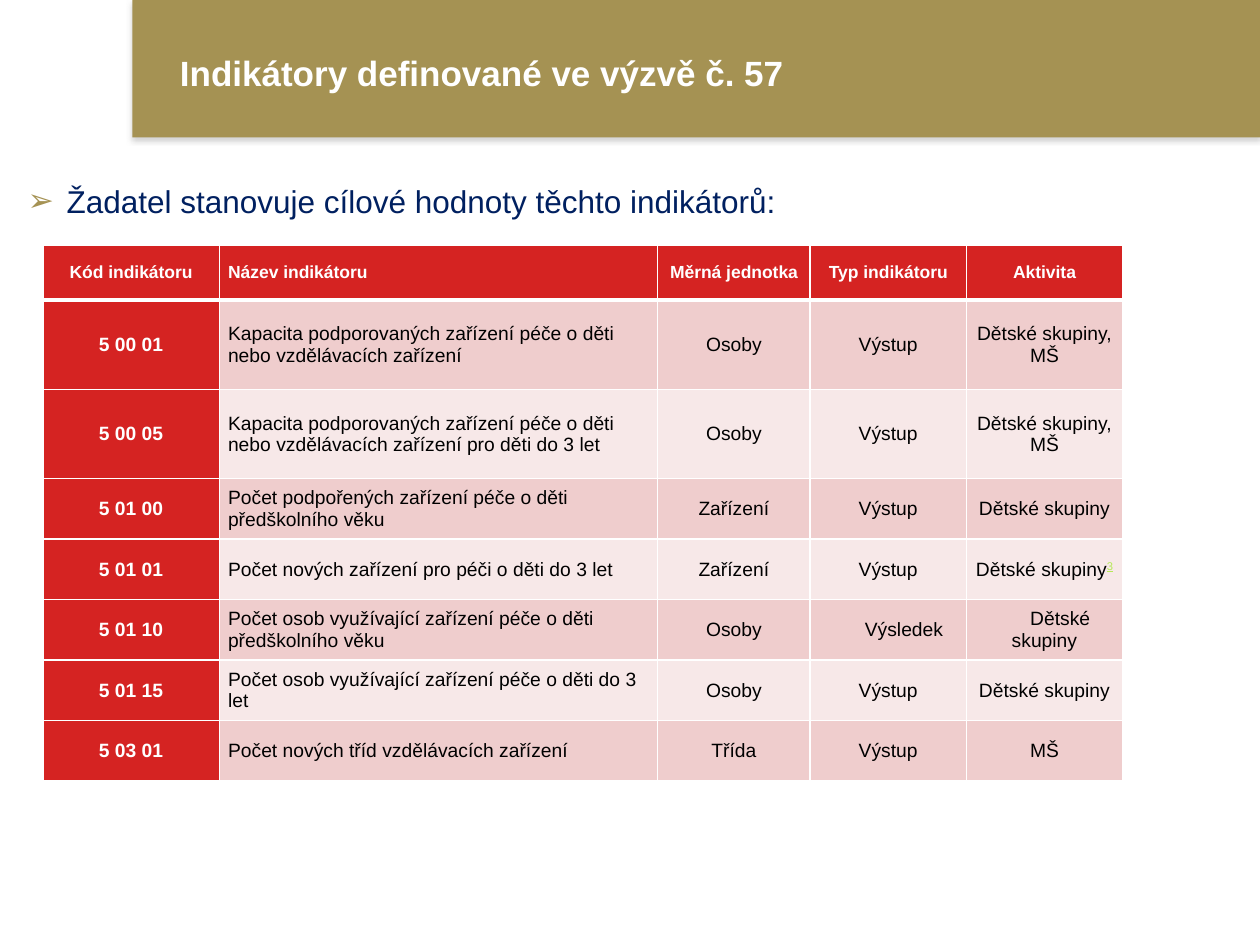
from lxml import etree
from pptx import Presentation
from pptx.dml.color import RGBColor
from pptx.enum.shapes import MSO_SHAPE
from pptx.enum.text import MSO_ANCHOR, PP_ALIGN
from pptx.oxml.ns import qn
from pptx.util import Inches, Pt

RECTANGLE = MSO_SHAPE.RECTANGLE
MIDDLE = MSO_ANCHOR.MIDDLE
LEFT, CENTER = PP_ALIGN.LEFT, PP_ALIGN.CENTER
COLORS = {
    "gold": "A59253", "navy": "002060", "red": "D52322", "rose": "EFCDCD",
    "blush": "F7E8E8", "lime": "B5E857", "white": "FFFFFF", "black": "000000",
    "shadow": "808080",
}
COLUMN_WIDTHS = [1.4, 3.48, 1.21, 1.24, 1.24]
ROW_HEIGHTS = [0.43] + [0.71] * 2 + [0.48] * 5
INDICATORS = [
    ["Kód indikátoru", "Název indikátoru", "Měrná jednotka", "Typ indikátoru", "Aktivita"],
    ["5 00 01", "Kapacita podporovaných zařízení péče o děti nebo vzdělávacích zařízení",
     "Osoby", "Výstup", "Dětské skupiny, MŠ"],
    ["5 00 05", "Kapacita podporovaných zařízení péče o děti nebo vzdělávacích zařízení pro děti do 3 let",
     "Osoby", "Výstup", "Dětské skupiny, MŠ"],
    ["5 01 00", "Počet podpořených zařízení péče o děti předškolního věku",
     "Zařízení", "Výstup", "Dětské skupiny"],
    ["5 01 01", "Počet nových zařízení pro péči o děti do 3 let",
     "Zařízení", "Výstup", "Dětské skupiny"],
    ["5 01 10", "Počet osob využívající zařízení péče o děti předškolního věku",
     "Osoby", "Výsledek", "Dětské skupiny"],
    ["5 01 15", "Počet osob využívající zařízení péče o děti do 3 let",
     "Osoby", "Výstup", "Dětské skupiny"],
    ["5 03 01", "Počet nových tříd vzdělávacích zařízení", "Třída", "Výstup", "MŠ"],
]
FOOTNOTE_CELL = (4, 4)
INDENTED_CELLS = {(5, 3), (5, 4)}


def rgb(name):
    """Return the named colour."""
    return RGBColor.from_string(COLORS[name])


def add_xml(parent, tag, **attributes):
    """Append a drawing element and return it."""
    values = {key: str(value) for key, value in attributes.items()}
    return etree.SubElement(parent, qn(tag), values)


def write(para, text, size=11, color="black", bold=False, align=LEFT, superscript=False):
    """Add a formatted span of text to a paragraph."""
    para.alignment = align
    span = para.add_run()
    span.text = text
    font = span.font
    font.name, font.size, font.bold = "Arial", Pt(size), bold
    font.color.rgb = rgb(color)
    if superscript:
        font.underline = True
        span._r.get_or_add_rPr().set("baseline", "30000")


class IndicatorPage:
    """Hold the slide and draw its kinds of element."""

    def __init__(self, page):
        self.page = page

    def banner(self, left, top, width, height):
        """Draw the gold band with its soft shadow."""
        band = self.page.shapes.add_shape(
            RECTANGLE, Inches(left), Inches(top), Inches(width), Inches(height))
        band.shadow.inherit = False
        band.fill.solid()
        band.fill.fore_color.rgb = rgb("gold")
        band.line.fill.background()
        effects = band._element.spPr.find(qn("a:effectLst"))
        shadow = add_xml(effects, "a:outerShdw", blurRad=Pt(3.1), dist=Pt(1.8),
                         dir=5400000, rotWithShape=0)
        tint = add_xml(shadow, "a:srgbClr", val=COLORS["shadow"])
        add_xml(tint, "a:alpha", val=35000)

    def text(self, left, top, width, height, text, bullet=None, **style):
        """Place a line of text, with a bullet if one is given."""
        box = self.page.shapes.add_textbox(
            Inches(left), Inches(top), Inches(width), Inches(height))
        frame = box.text_frame
        frame.word_wrap = True
        frame.vertical_anchor = MIDDLE
        para = frame.paragraphs[0]
        if bullet:
            properties = para._p.get_or_add_pPr()
            properties.set("marL", str(Inches(0.31)))
            properties.set("indent", str(-Inches(0.31)))
            add_xml(add_xml(properties, "a:buClr"), "a:srgbClr", val=COLORS["gold"])
            add_xml(properties, "a:buFont", typeface="Arial")
            add_xml(properties, "a:buChar", char=bullet)
        write(para, text, **style)

    def cell(self, cell, fill, top=1, bottom=1):
        """Set the borders, fill and margins of a cell and return its paragraph."""
        properties = cell._tc.get_or_add_tcPr()
        for side, width in zip("LRTB", (1, 1, top, bottom)):
            line = add_xml(properties, f"a:ln{side}", w=Pt(width))
            add_xml(add_xml(line, "a:solidFill"), "a:srgbClr", val=COLORS["white"])
        cell.fill.solid()
        cell.fill.fore_color.rgb = rgb(fill)
        cell.margin_left = cell.margin_right = Inches(0.07)
        cell.margin_top = cell.margin_bottom = 0
        cell.vertical_anchor = MIDDLE
        return cell.text_frame.paragraphs[0]

    def table(self, left, top, rows):
        """Draw the indicators with a red header row and code column."""
        table = self.page.shapes.add_table(
            len(rows), len(COLUMN_WIDTHS), Inches(left), Inches(top),
            Inches(sum(COLUMN_WIDTHS)), Inches(sum(ROW_HEIGHTS))).table
        table.first_row = table.horz_banding = False
        for column, width in zip(table.columns, COLUMN_WIDTHS):
            column.width = Inches(width)
        for row, height in zip(table.rows, ROW_HEIGHTS):
            row.height = Inches(height)
        for r, values in enumerate(rows):
            for c, value in enumerate(values):
                heading = r == 0 or c == 0
                fill = "red" if heading else "rose" if r % 2 else "blush"
                para = self.cell(table.cell(r, c), fill,
                                 top=3 if r == 1 else 1, bottom=3 if r == 0 else 1)
                if (r, c) in INDENTED_CELLS:
                    para._p.get_or_add_pPr().set("indent", str(Inches(0.25)))
                align = LEFT if c == 1 else CENTER
                write(para, value, size=11 if r else 10, bold=heading,
                      color="white" if heading else "black", align=align)
                if (r, c) == FOOTNOTE_CELL:
                    write(para, "3", color="lime", align=align, superscript=True)


def main():
    """Build and save the deck."""
    deck = Presentation()
    deck.slide_width, deck.slide_height = Inches(10), Inches(7.5)
    page = IndicatorPage(deck.slides.add_slide(deck.slide_layouts[6]))
    page.banner(1.05, 0, 8.95, 1.09)
    page.text(1.33, 0.4, 8.17, 0.35, "Indikátory definované ve výzvě č. 57",
              size=20, color="white", bold=True)
    page.text(0.12, 1.09, 9.88, 1.01, "Žadatel stanovuje cílové hodnoty těchto indikátorů:",
              bullet="➢", size=18, color="navy")
    page.table(0.34, 1.95, INDICATORS)
    deck.save("out.pptx")


if __name__ == "__main__":
    main()
